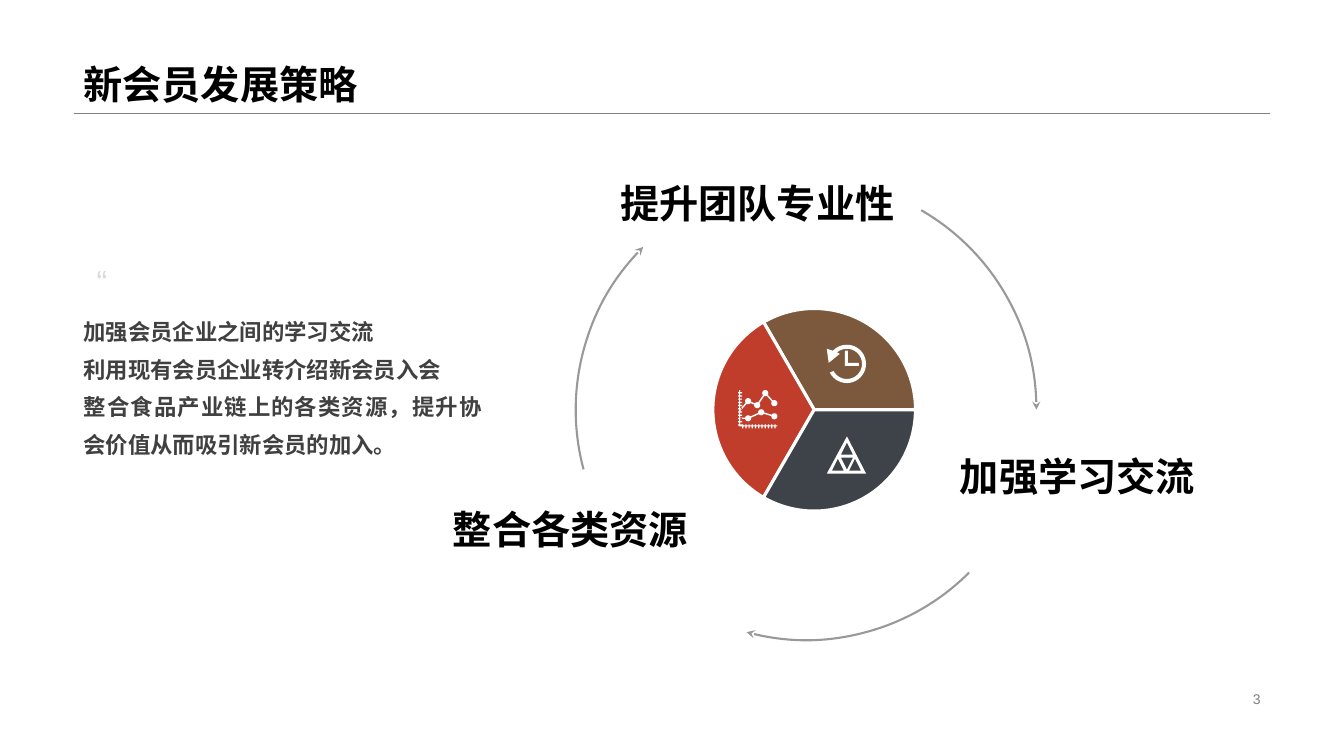
from math import cos, hypot, radians, sin

from lxml import etree
from pptx import Presentation
from pptx.dml.color import RGBColor
from pptx.enum.shapes import MSO_CONNECTOR, MSO_SHAPE
from pptx.enum.text import MSO_ANCHOR, PP_ALIGN
from pptx.oxml.ns import qn
from pptx.util import Inches, Pt

ARC, PIE = MSO_SHAPE.ARC, MSO_SHAPE.PIE
STRAIGHT = MSO_CONNECTOR.STRAIGHT
TOP, MIDDLE, BOTTOM = MSO_ANCHOR.TOP, MSO_ANCHOR.MIDDLE, MSO_ANCHOR.BOTTOM
LEFT, RIGHT, JUSTIFY = PP_ALIGN.LEFT, PP_ALIGN.RIGHT, PP_ALIGN.JUSTIFY
UNIT = 0.6  # adjustment value per degree


def color(hex):
    return RGBColor.from_string(hex)


def add_text(slide, box, text, size, hex, bold=False, align=LEFT,
             anchor=TOP, space=1.0, wrap=True):
    frame = slide.shapes.add_textbox(*map(Inches, box)).text_frame
    frame.text = text
    frame.word_wrap = wrap
    frame.vertical_anchor = anchor
    for para in frame.paragraphs:
        para.alignment = align
        para.line_spacing = space
        for run in para.runs:
            font = run.font
            font.name, font.size, font.bold = "Arial", Pt(size), bold
            font.color.rgb = color(hex)


def add_sector(slide, kind, box, start, end, turn, hex, width):
    shape = slide.shapes.add_shape(kind, *map(Inches, box))
    shape.shadow.inherit = False
    shape.adjustments[0] = start * UNIT
    shape.adjustments[1] = end * UNIT
    shape.rotation = turn
    shape.line.color.rgb = color(hex)
    shape.line.width = Pt(width)
    return shape


def add_icon(slide, paths):
    """Draw closed white outlines as one shape."""
    paths = [[(Inches(x), Inches(y)) for x, y in path] for path in paths]
    build = slide.shapes.build_freeform(*paths[0][0])
    for i, path in enumerate(paths):
        if i:
            build.move_to(*path[0])
        build.add_line_segments(path[1:], close=True)
    shape = build.convert_to_shape()
    shape.shadow.inherit = False
    shape.fill.solid()
    shape.fill.fore_color.rgb = color("FFFFFF")
    shape.line.fill.background()


def sweep(x, y, radius, start, end, steps=32):
    angles = [radians(start + (end - start) * i / steps) for i in range(steps + 1)]
    return [(x + radius * cos(a), y + radius * sin(a)) for a in angles]


def rect(x, y, w, h):
    return [(x, y), (x + w, y), (x + w, y + h), (x, y + h)]


def add_clock(slide, x, y):
    ring = sweep(x + 0.2, y + 0.19, 0.19, 222, 513)
    ring += sweep(x + 0.2, y + 0.19, 0.15, 512, 229)
    head = [(0.13, 0.09), (0.02, 0.18), (0, 0.04), (0.06, 0.06)]
    hands = [(0.18, 0.06), (0.21, 0.06), (0.21, 0.18), (0.32, 0.18),
             (0.32, 0.21), (0.18, 0.21)]
    ring += [(x + a, y + b) for a, b in head]
    add_icon(slide, [ring, [(x + a, y + b) for a, b in hands]])


def add_graph(slide, x, y):
    # Axes with ticks on both sides
    paths = [rect(x + 0.01, y, 0.01, 0.36), rect(x + 0.02, y + 0.35, 0.37, 0.01)]
    for i in range(11):
        step = 0.032 * i
        paths.append(rect(x, y + 0.02 + step, 0.01, 0.012))
        paths.append(rect(x + 0.02, y + 0.02 + step, 0.02, 0.012))
        paths.append(rect(x + 0.04 + step, y + 0.34, 0.012, 0.01))
        paths.append(rect(x + 0.04 + step, y + 0.36, 0.012, 0.02))
    # Two curves, each from the axis through its dots
    curves = [[(0.02, 0.2), (0.1, 0.11), (0.19, 0.15), (0.27, 0.03), (0.36, 0.13)],
              [(0.02, 0.28), (0.1, 0.28), (0.23, 0.22), (0.36, 0.26)]]
    dot, half = 0.03, 0.007
    for curve in curves:
        dots = [(x + a, y + b) for a, b in curve]
        paths += [sweep(a, b, dot, 0, 360, 24) for a, b in dots[1:]]
        for i, ((a, b), (c, d)) in enumerate(zip(dots, dots[1:])):
            size = hypot(c - a, d - b)
            u, v = (c - a) / size, (d - b) / size
            trim = dot if i else 0
            a, b = a + u * trim, b + v * trim
            c, d = c - u * dot, d - v * dot
            p, q = -v * half, u * half
            paths.append([(a + p, b + q), (c + p, d + q), (c - p, d - q), (a - p, b - q)])
    add_icon(slide, paths)


def add_prism(slide, x, y):
    outer = [(0.2, 0), (0, 0.37), (0.39, 0.37)]
    holes = [[(0.2, 0.06), (0.26, 0.18), (0.14, 0.18)],
             [(0.05, 0.34), (0.11, 0.22), (0.17, 0.34)],
             [(0.14, 0.21), (0.26, 0.21), (0.2, 0.33)],
             [(0.28, 0.22), (0.34, 0.34), (0.22, 0.34)]]
    add_icon(slide, [[(x + a, y + b) for a, b in path] for path in [outer] + holes])


def add_header(slide, x, y, w, h):
    rule = slide.shapes.add_connector(
        STRAIGHT, Inches(x), Inches(y + h), Inches(x + w), Inches(y + h))
    rule.line.color.rgb = color("808080")
    rule.line.width = Pt(0.25)
    etree.SubElement(rule.element.spPr, qn("a:effectLst"))
    add_text(slide, (x, y, w, h), "新会员发展策略", 28, "000000", True,
             anchor=BOTTOM, space=0.9)


def add_quote(slide, x, y, w, h):
    add_text(slide, (x + 0.13, y, 0.45, 0.43), "“", 22.8, "D9D9D9", anchor=MIDDLE)
    lines = ["加强会员企业之间的学习交流", "利用现有会员企业转介绍新会员入会",
             "整合食品产业链上的各类资源，提升协会价值从而吸引新会员的加入。"]
    add_text(slide, (x, y + 0.43, w, h - 0.43), "\n".join(lines), 16, "404040",
             True, align=JUSTIFY, space=1.4)


def add_cycle(slide, x, y, size):
    # Curved arrows
    for turn in (0, 105, 225):
        arc = add_sector(slide, ARC, (x, y, size, size), 300, 0, turn, "999999", 1.5)
        arc.fill.background()
        line = arc.element.spPr.find(qn("a:ln"))
        etree.SubElement(line, qn("a:tailEnd"), type="stealth")
    # Thirds of the disc
    disc = (x + 1.36, y + 1.28, 2.01, 2.01)
    for turn, hex in ((180, "7C593D"), (60, "C03D2B"), (300, "3E4349")):
        third = add_sector(slide, PIE, disc, 60, 180, turn, "FFFFFF", 2.25)
        third.fill.solid()
        third.fill.fore_color.rgb = color(hex)
    # Icons
    add_clock(slide, x + 2.49, y + 1.64)
    add_graph(slide, x + 1.61, y + 2.09)
    add_prism(slide, x + 2.49, y + 2.55)
    # Labels
    labels = [("提升团队专业性", 0.22, -0.11, 3.04), ("加强学习交流", 3.2, 2.6, 3.04),
              ("整合各类资源", -1.64, 3.13, 2.85)]
    for text, dx, dy, w in labels:
        add_text(slide, (x + dx, y + dy, w, 0.62), text, 28, "000000", True,
                 align=RIGHT, anchor=BOTTOM, wrap=False)


def main():
    deck = Presentation()
    deck.slide_width, deck.slide_height = Inches(13.33), Inches(7.5)
    slide = deck.slides.add_slide(deck.slide_layouts[6])
    add_header(slide, 0.73, 0, 11.87, 1.12)
    add_quote(slide, 0.73, 2.57, 4.15, 2.04)
    add_cycle(slide, 5.71, 1.78, 4.57)
    add_text(slide, (9.42, 6.82, 3.18, 0.23), "3", 10, "808080",
             align=RIGHT, anchor=MIDDLE)
    deck.save("out.pptx")


if __name__ == "__main__":
    main()
